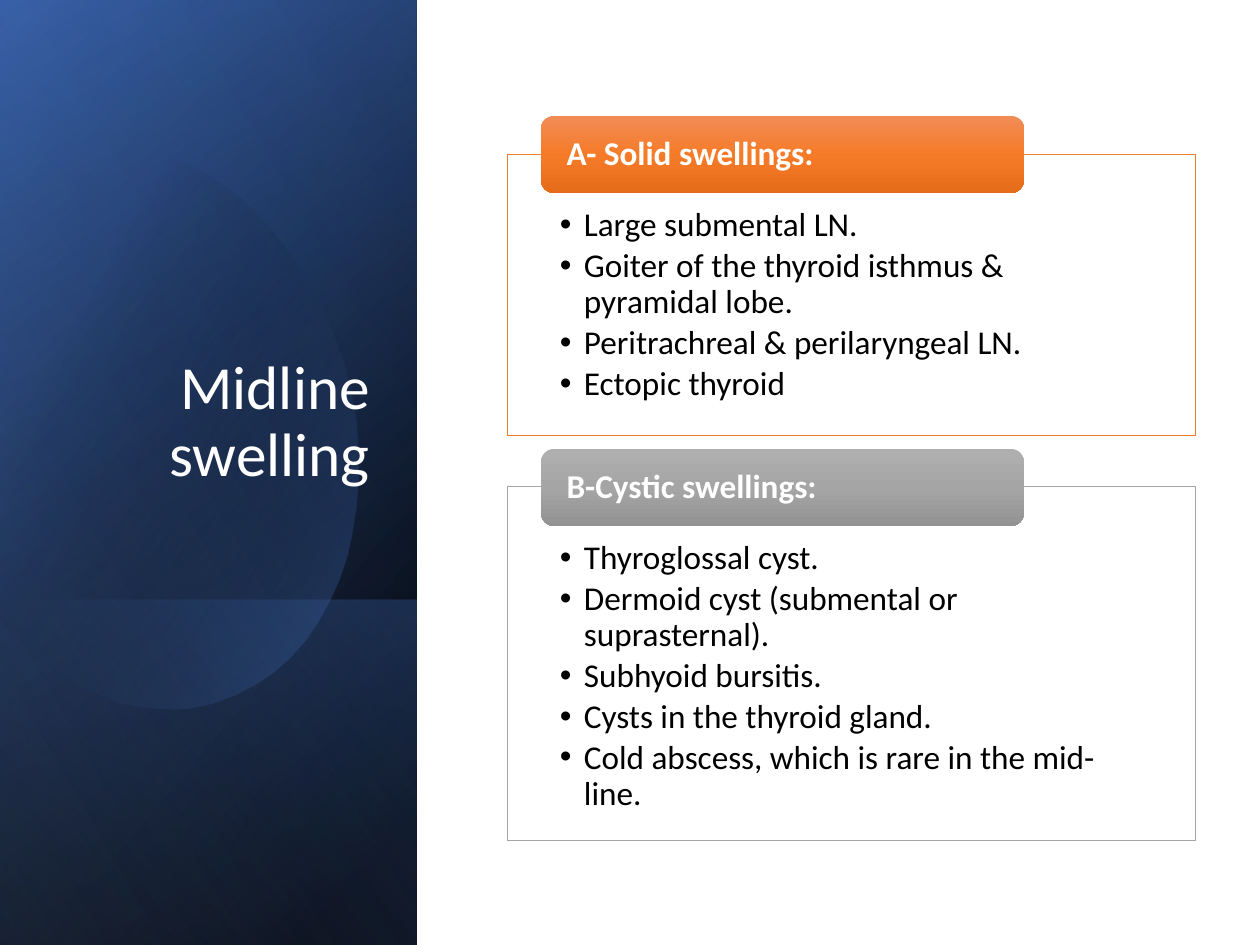
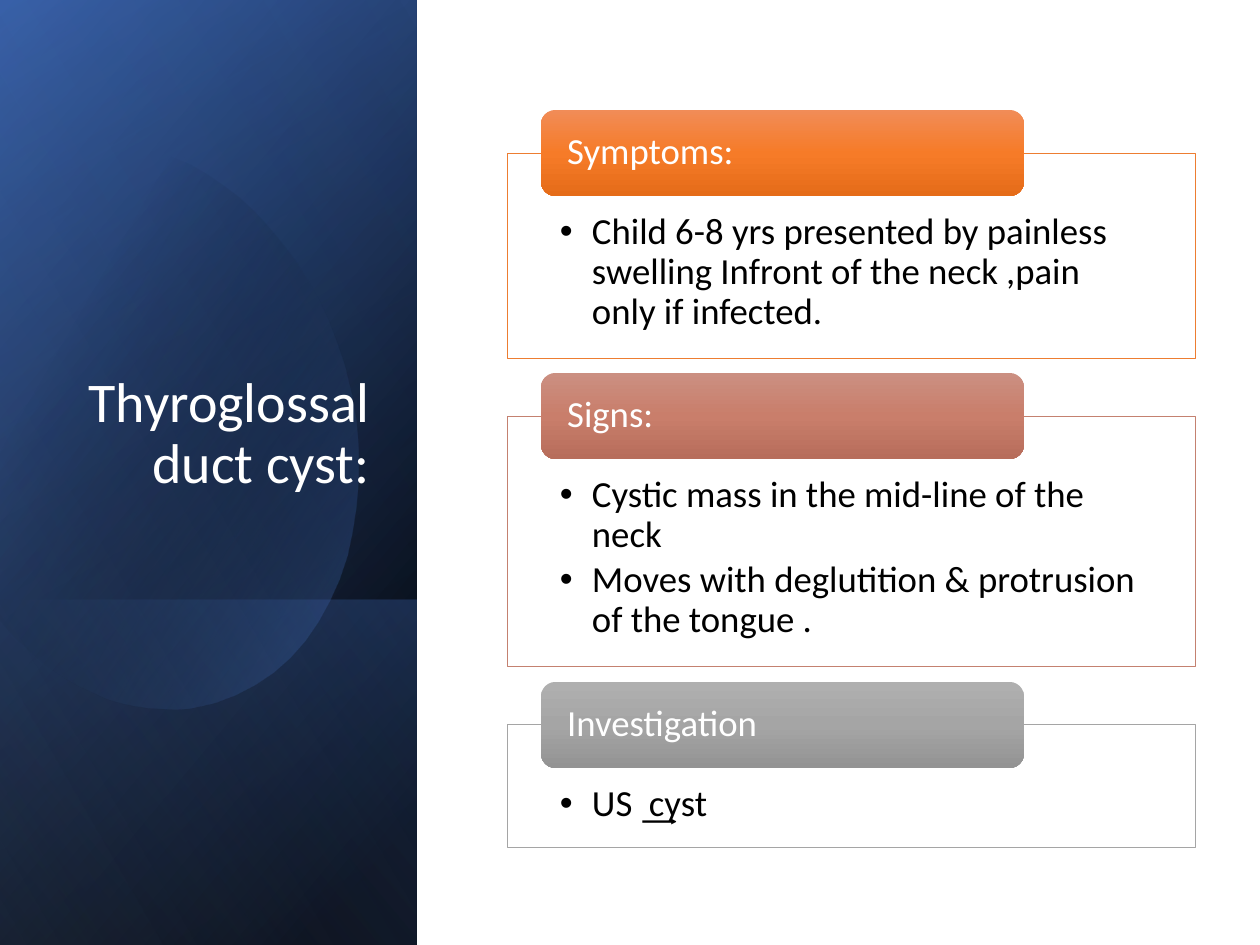
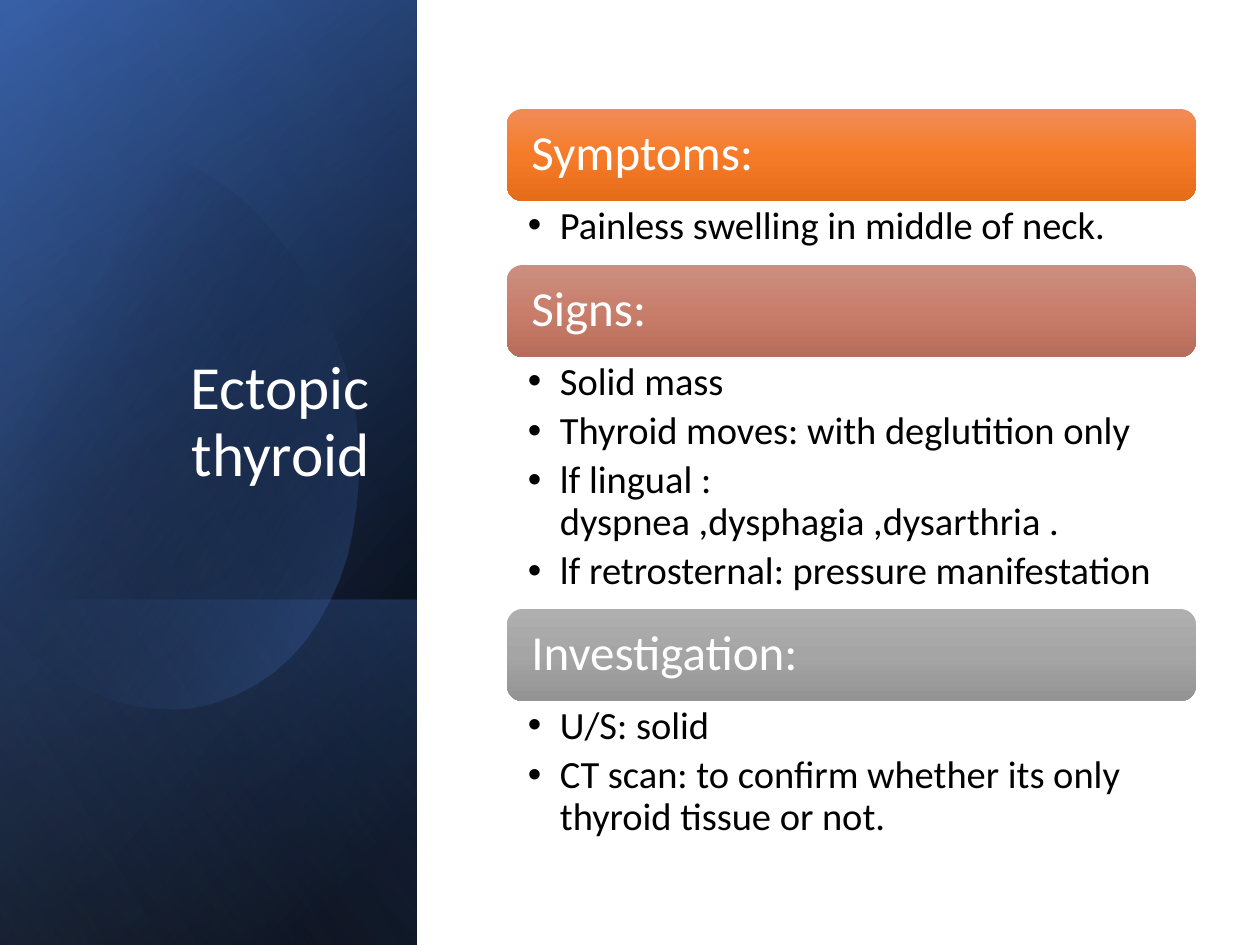
import pptx
import pptx.dml.color
import pptx.enum.shapes
import pptx.enum.text
import pptx.oxml
import pptx.oxml.ns
import pptx.util

SCALE = 914400 / 126
FONT = "Calibri"
WHITE, BLACK = "FFFFFF", "000000"

# Content: each section is (header, tone, body height, bullet items)
SLIDES = [
    {"title": "Midline swelling", "title_size": 35, "style": "bold_tabs", "sections": [
        ("A- Solid swellings:", "orange", 281, [
            "Large submental LN.",
            "Goiter of the thyroid isthmus & pyramidal lobe.",
            "Peritrachreal & perilaryngeal LN.",
            "Ectopic thyroid"]),
        ("B-Cystic swellings:", "grey", 354, [
            "Thyroglossal cyst.",
            "Dermoid cyst (submental or suprasternal).",
            "Subhyoid bursitis.",
            "Cysts in the thyroid gland.",
            "Cold abscess, which is rare in the mid-line."])]},
    {"title": "Thyroglossal duct cyst:", "title_size": 32, "style": "tabs", "sections": [
        ("Symptoms:", "orange", 205, [
            "Child 6-8 yrs presented by painless swelling Infront of the neck ,pain only if infected."]),
        ("Signs:", "red", 251, [
            "Cystic mass in the mid-line of the neck",
            "Moves with deglutition & protrusion of the tongue ."]),
        ("Investigation", "grey", 123, ["US ͢ cyst"])]},
    {"title": "Ectopic thyroid", "title_size": 35, "style": "bars", "sections": [
        ("Symptoms:", "orange", 64, ["Painless swelling in middle of neck."]),
        ("Signs:", "red", 252, [
            "Solid mass",
            "Thyroid moves: with deglutition only",
            "lf lingual :\ndyspnea ,dysphagia ,dysarthria .",
            "lf retrosternal: pressure manifestation"]),
        ("Investigation:", "grey", 148, [
            "U/S: solid",
            "CT scan: to confirm whether its only thyroid tissue or not."])]},
]

# Section styles: lengths in px, sizes in points, insets left, top, right, bottom
STYLES = {
    "bold_tabs": {"top": 116, "header": 77, "drop": 38, "gap": 14, "left": 541, "width": 483,
                  "framed": True, "bold": True, "header_size": 19, "size": 19, "indent": 24,
                  "header_inset": 22, "inset": (53, 54, 53, 19), "after": 0.15},
    "tabs": {"top": 110, "header": 86, "drop": 43, "gap": 15, "left": 541, "width": 483,
             "framed": True, "bold": False, "header_size": 21, "size": 21, "indent": 32,
             "header_inset": 22, "inset": (53, 60, 53, 20), "after": 0.15},
    "bars": {"top": 109, "header": 92, "drop": 92, "gap": 0, "left": 507, "width": 689,
             "framed": False, "bold": False, "header_size": 28, "size": 22, "indent": 32,
             "header_inset": 20, "inset": (21, 5, 28, 5), "after": 0.2},
}
TONES = {  # line colour, then header gradient from top to bottom
    "orange": ("ED7D31", ("F18C57", "F67B28", "E56C19")),
    "red": ("C48170", ("CB8F81", "C97E6B", "B76D5B")),
    "grey": ("A5A5A5", ("AFAFAF", "A5A5A5", "939393")),
}
BODY_LEFT, BODY_WIDTH = 507, 689

# Side panel: layers are (top, height, angle, stops); a stop is position, colour, opacity
PANEL_WIDTH, PANEL_HEIGHT = 417, 945
BACK_LAYERS = [
    (0, PANEL_HEIGHT, 50, [(8, BLACK, 100), (100, "2F5597", 100)]),
    (0, PANEL_HEIGHT, 30, [(0, BLACK, 0), (99, "4472C4", 46)]),
    (600, 345, 130, [(2, "4472C4", 29), (100, BLACK, 30)]),
]
FRONT_LAYER = (0, PANEL_HEIGHT, 120, [(0, BLACK, 0), (99, "8FAADC", 11)])
OVAL_STOPS = [(29, BLACK, 0), (100, "4472C4", 43)]
OVAL_START = (121, 144)
OVAL_PARTS = [  # three points make a curve, one makes a straight side
    [(215, 154), (307, 242), (344, 365)],
    [(387, 519), (330, 669), (215, 702)],
    [(144, 723), (67, 693), (9, 630)],
    [(-4, 615)], [(-31, 209)], [(-19, 194)],
    [(3, 173), (28, 158), (57, 149)],
    [(78, 142), (100, 141), (121, 144)],
]
CURVE_STEPS = 16


# Helpers
def px(length):
    return pptx.util.Emu(round(length * SCALE))


def colour(value):
    return pptx.dml.color.RGBColor.from_string(value)


def apply(target, values):
    for name, value in values.items():
        setattr(target, name, value)


def set_gradient(shape, stops, angle):
    shape.shadow.inherit = False
    shape.line.fill.background()
    shape.fill.background()
    marks = "".join(
        f'<a:gs pos="{place * 1000}"><a:srgbClr val="{value}">'
        f'<a:alpha val="{opacity * 1000}"/></a:srgbClr></a:gs>'
        for place, value, opacity in stops)
    gradient = pptx.oxml.parse_xml(
        f'<a:gradFill {pptx.oxml.ns.nsdecls("a")} rotWithShape="1"><a:gsLst>{marks}</a:gsLst>'
        f'<a:lin ang="{angle * 60000}" scaled="0"/></a:gradFill>')
    properties = shape._element.spPr
    properties.replace(properties.find(pptx.oxml.ns.qn("a:noFill")), gradient)


def set_bullet(para, indent):
    properties = para._p.get_or_add_pPr()
    properties.set("marL", str(px(indent)))
    properties.set("indent", str(-px(indent)))
    properties.append(pptx.oxml.parse_xml(
        f'<a:buFont {pptx.oxml.ns.nsdecls("a")} typeface="Arial"/>'))
    properties.append(pptx.oxml.parse_xml(
        f'<a:buChar {pptx.oxml.ns.nsdecls("a")} char="•"/>'))


def write(shape, texts, size, value, inset, anchor, align="LEFT", bold=False, after=0, indent=0):
    frame = shape.text_frame
    left, top, right, bottom = map(px, inset)
    apply(frame, {"word_wrap": True, "auto_size": pptx.enum.text.MSO_AUTO_SIZE.NONE,
                  "vertical_anchor": pptx.enum.text.MSO_ANCHOR[anchor],
                  "margin_left": left, "margin_top": top,
                  "margin_right": right, "margin_bottom": bottom})
    for index, text in enumerate(texts):
        para = frame.add_paragraph() if index else frame.paragraphs[0]
        para.text = text
        if indent:
            para.level = 1
            set_bullet(para, indent)
        apply(para, {"alignment": pptx.enum.text.PP_ALIGN[align], "line_spacing": 0.9,
                     "space_before": pptx.util.Pt(0), "space_after": pptx.util.Pt(size * after)})
        for span in para.runs:
            apply(span.font, {"name": FONT, "size": pptx.util.Pt(size), "bold": bold})
            span.font.color.rgb = colour(value)


# Shared side panel
def add_layer(page, top, height, angle, stops):
    left = (PANEL_WIDTH - height) / 2
    layer = page.shapes.add_shape(
        pptx.enum.shapes.MSO_SHAPE.RECTANGLE,
        px(left), px(top - left), px(height), px(PANEL_WIDTH))
    layer.rotation = 90
    layer._element.spPr.find(pptx.oxml.ns.qn("a:xfrm")).set("flipH", "1")
    set_gradient(layer, stops, angle)


def oval_points():
    points, start = [], OVAL_START
    for part in OVAL_PARTS:
        if len(part) == 1:
            points += part
        else:
            for step in range(1, CURVE_STEPS + 1):
                t = step / CURVE_STEPS
                weights = ((1 - t) ** 3, 3 * t * (1 - t) ** 2, 3 * t * t * (1 - t), t ** 3)
                points.append(tuple(
                    sum(weight * point[axis] for weight, point in zip(weights, [start] + part))
                    for axis in (0, 1)))
        start = part[-1]
    return points


def add_panel(page):
    for layer in BACK_LAYERS:
        add_layer(page, *layer)
    builder = page.shapes.build_freeform(*OVAL_START, scale=SCALE)
    builder.add_line_segments(oval_points(), close=True)
    set_gradient(builder.convert_to_shape(), OVAL_STOPS, 30)
    add_layer(page, *FRONT_LAYER)


def add_title(page, text, size):
    title = page.shapes.title
    page.shapes._spTree.append(title._element)
    apply(title, {"left": px(60), "top": px(232), "width": px(323), "height": px(330)})
    # The text rests one line above the bottom of its box
    write(title, [text], size, WHITE, (13, 6, 13, 6 + size * 1.9), "BOTTOM", "RIGHT")


# Sections: a header bar over each body
def add_body(page, items, top, height, tone, style):
    area = px(BODY_LEFT), px(top), px(BODY_WIDTH), px(height)
    if style["framed"]:
        body = page.shapes.add_shape(pptx.enum.shapes.MSO_SHAPE.RECTANGLE, *area)
        body.shadow.inherit = False
        body.fill.solid()
        body.fill.fore_color.rgb = colour(WHITE)
        body.line.color.rgb = colour(TONES[tone][0])
        body.line.width = pptx.util.Pt(0.5)
    else:
        body = page.shapes.add_textbox(*area)
    write(body, items, style["size"], BLACK, style["inset"], "TOP",
          after=style["after"], indent=style["indent"])


def add_header(page, text, top, tone, style):
    header = page.shapes.add_shape(
        pptx.enum.shapes.MSO_SHAPE.ROUNDED_RECTANGLE,
        px(style["left"]), px(top), px(style["width"]), px(style["header"]))
    stops = [(place, value, 100) for place, value in zip((0, 50, 100), TONES[tone][1])]
    set_gradient(header, stops, 90)
    side = style["header_inset"]
    write(header, [text], style["header_size"], WHITE, (side, 0, side, 0), "MIDDLE",
          bold=style["bold"])


def add_sections(page, sections, style):
    top = style["top"]
    for text, tone, height, items in sections:
        body_top = top + style["drop"]
        add_body(page, items, body_top, height, tone, style)
        add_header(page, text, top, tone, style)
        top = body_top + height + style["gap"]


def main():
    deck = pptx.Presentation()
    deck.slide_width, deck.slide_height = px(1260), px(945)
    for content in SLIDES:
        page = deck.slides.add_slide(deck.slide_layouts.get_by_name("Title Only"))
        add_panel(page)
        add_title(page, content["title"], content["title_size"])
        add_sections(page, content["sections"], STYLES[content["style"]])
    deck.save("out.pptx")


if __name__ == "__main__":
    main()
